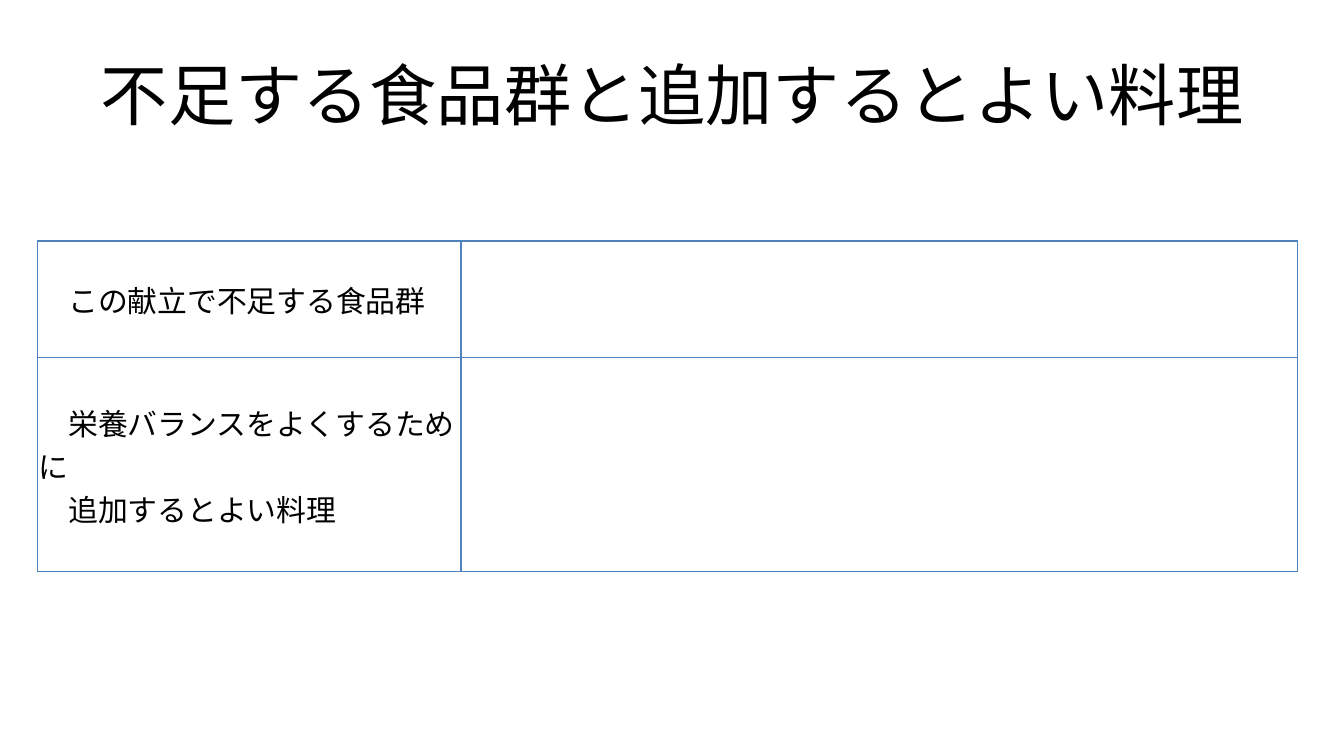
from lxml.etree import SubElement
from pptx import Presentation
from pptx.dml.color import RGBColor
from pptx.enum.text import MSO_ANCHOR, PP_ALIGN
from pptx.oxml.ns import qn
from pptx.util import Pt

BLACK = RGBColor(0x00, 0x00, 0x00)
BLUE = RGBColor(0x4F, 0x81, 0xBD)


class Worksheet:
    font = "Calibri"
    title_size = 36
    cell_size = 16
    border_width = 1

    def __init__(self, page):
        self.page = page

    def add_span(self, para, text, size):
        span = para.add_run()
        span.text = text
        span.font.name = self.font
        span.font.size = Pt(size)
        span.font.color.rgb = BLACK

    def title(self, text, left, top, width, height):
        box = self.page.shapes.title
        box.left, box.top, box.width, box.height = map(Pt, (left, top, width, height))
        box.text_frame.vertical_anchor = MSO_ANCHOR.MIDDLE
        para = box.text_frame.paragraphs[0]
        para.alignment = PP_ALIGN.CENTER
        self.add_span(para, text, self.title_size)

    def border(self, cell):
        properties = cell._tc.get_or_add_tcPr()
        for side in ("a:lnL", "a:lnR", "a:lnT", "a:lnB"):
            line = SubElement(properties, qn(side), w=str(Pt(self.border_width)))
            fill = SubElement(line, qn("a:solidFill"))
            SubElement(fill, qn("a:srgbClr"), val=str(BLUE))

    def table(self, labels, left, top, widths, heights):
        frame = self.page.shapes.add_table(
            len(heights), len(widths), Pt(left), Pt(top), Pt(sum(widths)), Pt(sum(heights)))
        table = frame.table
        table.first_row = table.horz_banding = False
        for column, width in zip(table.columns, widths):
            column.width = Pt(width)
        for row, height in zip(table.rows, heights):
            row.height = Pt(height)
        for cell in table.iter_cells():
            self.border(cell)
            cell.fill.background()
        for row, lines in enumerate(labels):
            self.label(table.cell(row, 0), lines)

    def label(self, cell, lines):
        cell.vertical_anchor = MSO_ANCHOR.MIDDLE
        cell.margin_left = cell.margin_right = cell.margin_top = Pt(0.72)
        cell.margin_bottom = 0
        para = cell.text_frame.paragraphs[0]
        for number, line in enumerate(lines):
            if number:
                para.add_line_break()
            self.add_span(para, line, self.cell_size)


def main():
    deck = Presentation()
    deck.slide_width, deck.slide_height = Pt(720), Pt(405)
    sheet = Worksheet(deck.slides.add_slide(deck.slide_layouts[5]))

    # Heading
    sheet.title("不足する食品群と追加するとよい料理", 36, 16.5, 648, 67.5)

    # Answer table: labels on the left, blank answers on the right
    labels = [
        ["　この献立で不足する食品群"],
        ["　栄養バランスをよくするために", "　追加するとよい料理"],
    ]
    sheet.table(labels, 20, 129, widths=(227, 448), heights=(62.6, 114.5))

    deck.save("out.pptx")


if __name__ == "__main__":
    main()
